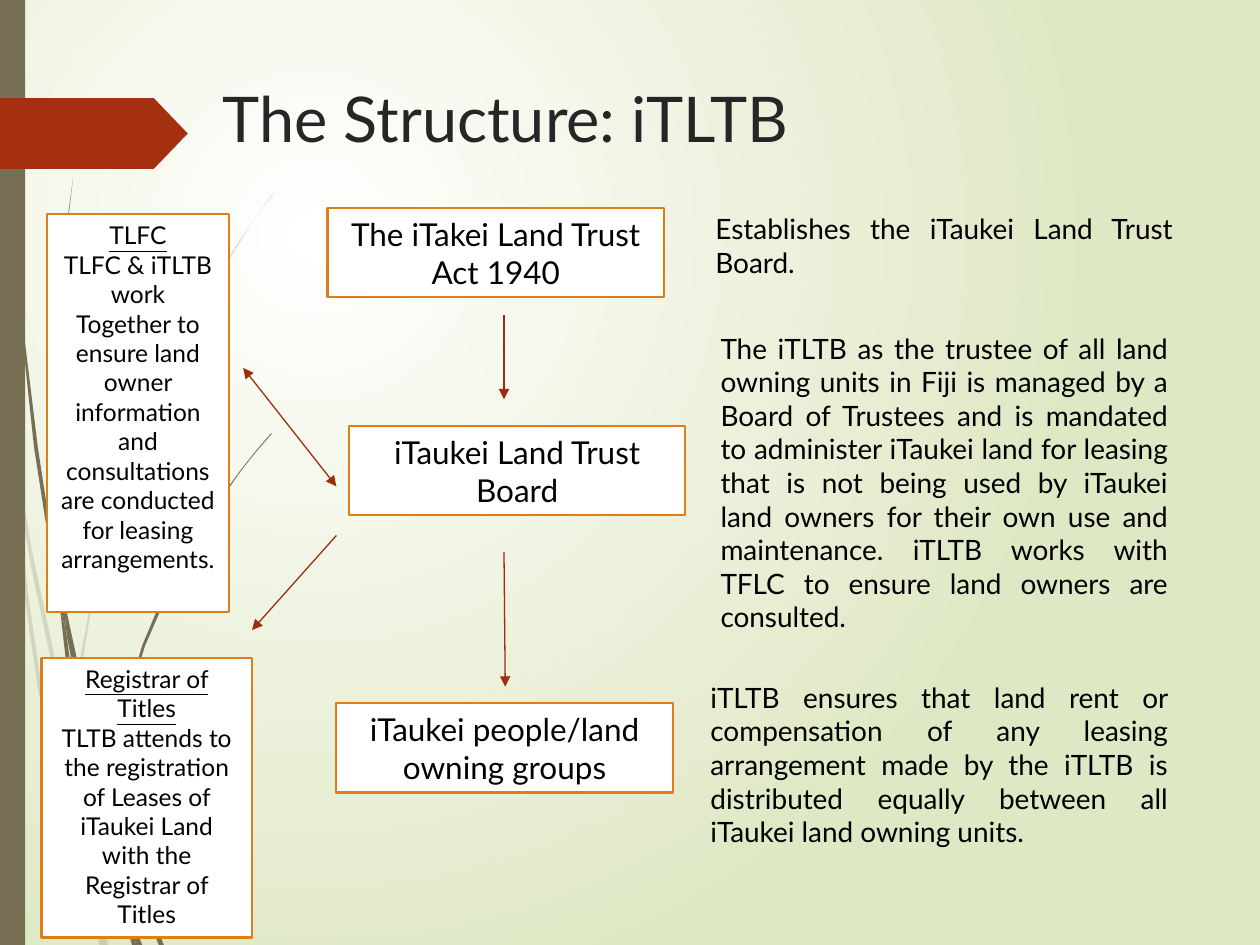
from dataclasses import dataclass

from lxml import etree
from pptx import Presentation
from pptx import util as u
from pptx.dml.color import RGBColor
from pptx.enum import shapes, text
from pptx.oxml import ns

FONT = "Lato"
COLORS = {
    "olive": "766F54", "rust": "A53010", "arrow": "9E2E0F", "border": "DE7E18",
    "white": "FFFFFF", "glow": "DFE8C4", "ink": "000000", "heading": "262626",
}


@dataclass(frozen=True)
class Block:
    left: float
    top: float
    width: float
    height: float
    lines: tuple[str, ...]
    size: int
    align: text.PP_ALIGN = text.PP_ALIGN.CENTER
    anchor: text.MSO_ANCHOR = text.MSO_ANCHOR.MIDDLE
    color: str = "ink"
    underline_first: bool = False


@dataclass(frozen=True)
class Arrow:
    start: tuple[float, float]
    end: tuple[float, float]
    two_way: bool = False


def step(left: float, top: float, label: str) -> Block:
    return Block(left, top, 2.67, 0.71, (label,), 18)


def partner(left: float, top: float, width: float, height: float, *lines: str) -> Block:
    return Block(left, top, width, height, lines, 14,
                 anchor=text.MSO_ANCHOR.TOP, underline_first=True)


def remark(left: float, top: float, width: float, height: float, words: str) -> Block:
    return Block(left, top, width, height, (words,), 16,
                 text.PP_ALIGN.JUSTIFY, text.MSO_ANCHOR.TOP)


PALE_WISPS = [
    [(0.08, 3.5), (0.06, 3.22), (0, 2.82), (0, 2.99), (0.07, 3.44)],
    [(0.4, 5.22), (0.59, 5.99), (0.59, 5.86), (0.43, 5.2), (0.25, 4.35),
     (0.1, 3.45), (0.12, 3.76), (0.25, 4.52)],
    [(0.64, 6.07), (0.61, 5.96), (0.61, 6.1), (0.85, 6.94), (1.04, 7.5),
     (1.08, 7.5), (0.88, 6.92)],
    [(0.83, 7.5), (0.86, 7.5), (0.73, 7.11)],
    [(0.64, 6.83), (0.48, 6.19), (0.33, 5.45), (0.22, 4.69), (0.12, 3.76),
     (0.08, 3.5), (0.19, 4.7), (0.3, 5.46), (0.45, 6.21), (0.64, 6.93),
     (0.7, 7.14), (0.69, 7.07)],
    [(0.61, 5.84), (0.66, 5.22), (0.76, 4.62), (0.92, 4.04), (1.11, 3.49),
     (1.34, 2.95), (1.59, 2.45), (1.87, 1.98), (2.01, 1.75), (2.17, 1.54),
     (2.17, 1.53), (2.01, 1.75), (1.86, 1.97), (1.58, 2.44), (1.33, 2.94),
     (1.1, 3.48), (0.91, 4.03), (0.75, 4.61), (0.64, 5.21), (0.59, 5.84),
     (0.61, 5.96)],
    [(0.7, 7.14), (0.79, 7.5), (0.82, 7.5)],
    [(0.67, 6.92), (0.65, 6.83), (0.69, 7.07), (0.7, 7.14), (0.82, 7.5),
     (0.83, 7.5), (0.73, 7.11)],
]
DARK_WISPS = [
    [(0.05, 1.1), (0.14, 2.33), (0.27, 3.55), (0.46, 4.77), (0.47, 4.81),
     (0.45, 4.53), (0.3, 3.55), (0.15, 2.32), (0.06, 1.09), (0.04, 0.48),
     (0.03, 0), (0.02, 0), (0.03, 0.48)],
    [(0.73, 5.92), (0.88, 6.45), (0.88, 6.31), (0.77, 5.9), (0.63, 5.32),
     (0.5, 4.72), (0.53, 5.05), (0.62, 5.49)],
    [(0.94, 6.49), (0.91, 6.41), (0.91, 6.56), (1.09, 7.08), (1.26, 7.5),
     (1.3, 7.5), (1.13, 7.06)],
    [(0.91, 6.91), (0.81, 6.57), (0.69, 6.07), (0.6, 5.56), (0.53, 5.05),
     (0.47, 4.77), (0.56, 5.57), (0.65, 6.08), (0.77, 6.59), (0.92, 7.08),
     (0.97, 7.22), (0.96, 7.17)],
    [(0.5, 4.72), (0.48, 4.53), (0.44, 3.49), (0.48, 2.45), (0.52, 1.93),
     (0.58, 1.41), (0.51, 1.93), (0.47, 2.45), (0.43, 3.49), (0.45, 4.49),
     (0.49, 4.72)],
    [(1.1, 7.5), (1.13, 7.5), (1, 7.19)],
    [(0.47, 4.77), (0.53, 5.05), (0.5, 4.72), (0.49, 4.72), (0.45, 4.49),
     (0.45, 4.53)],
    [(0.91, 6.33), (0.95, 5.92), (1.03, 5.52), (1.15, 5.13), (1.31, 4.76),
     (1.49, 4.4), (1.69, 4.06), (1.91, 3.74), (2.03, 3.59), (2.16, 3.44),
     (2.15, 3.44), (2.03, 3.58), (1.91, 3.73), (1.68, 4.05), (1.48, 4.39),
     (1.29, 4.74), (1.13, 5.12), (1.01, 5.51), (0.92, 5.91), (0.88, 6.31),
     (0.91, 6.41)],
    [(0.97, 7.22), (1.05, 7.5), (1.08, 7.5)],
    [(0.96, 7.06), (0.91, 6.91), (0.96, 7.17), (0.97, 7.22), (1.08, 7.5),
     (1.1, 7.5), (1, 7.19)],
]
TITLE = Block(1.67, 0.58, 7.21, 1.08, ("The Structure: iTLTB",), 36,
              text.PP_ALIGN.LEFT, text.MSO_ANCHOR.TOP, "heading")
BOXES = [
    step(2.6, 1.65, "The iTakei Land Trust Act 1940"),
    step(2.77, 3.38, "iTaukei Land Trust Board"),
    step(2.67, 5.58, "iTaukei people/land owning groups"),
    partner(0.37, 1.7, 1.45, 3.16, "TLFC", "TLFC & iTLTB work",
            "Together to ensure land owner information and consultations "
            "are conducted for leasing arrangements."),
    partner(0.33, 5.22, 1.67, 2.22, "Registrar of Titles",
            "TLTB attends to the registration of Leases of iTaukei Land "
            "with the Registrar of Titles"),
]
REMARKS = [
    remark(5.58, 1.63, 3.83, 0.64, "Establishes the iTaukei Land Trust Board."),
    remark(5.62, 2.58, 3.75, 2.52,
           "The iTLTB as the trustee of all land owning units in Fiji is managed by "
           "a Board of Trustees and is mandated to administer iTaukei land for "
           "leasing that is not being used by iTaukei land owners for their own use "
           "and maintenance. iTLTB works with TFLC to ensure land owners are consulted."),
    remark(5.54, 5.35, 3.83, 1.45,
           "iTLTB ensures that land rent or compensation of any leasing arrangement "
           "made by the iTLTB is distributed equally between all iTaukei land owning units."),
]
ARROWS = [
    Arrow((4, 2.5), (4, 3.17)),
    Arrow((4, 4.38), (4.01, 5.45)),
    Arrow((1.93, 2.92), (2.67, 3.86), two_way=True),
    Arrow((2.67, 4.25), (2, 5)),
]


def rgb(name: str) -> RGBColor:
    return RGBColor.from_string(COLORS[name])


def paint(shape, fill: str, border: str | None = None) -> None:
    shape.shadow.inherit = False
    shape.fill.solid()
    shape.fill.fore_color.rgb = rgb(fill)
    if border:
        shape.line.color.rgb = rgb(border)
        shape.line.width = u.Pt(1.25)
    else:
        shape.line.fill.background()


def paint_background(slide) -> None:
    fill = slide.background.fill
    fill.gradient()
    for stop, name, position in zip(fill.gradient_stops, ("white", "glow"), (0, 1)):
        stop.color.rgb = rgb(name)
        stop.position = position
    linear = next(slide.background._cSld.iter(ns.qn("a:lin")))
    radial = etree.Element(ns.qn("a:path"), path="circle")
    etree.SubElement(radial, ns.qn("a:fillToRect"), l="50000", t="50000", r="100000", b="100000")
    linear.getparent().replace(linear, radial)


def draw_wisp(slide, points: list[tuple[float, float]], pale: bool) -> None:
    corners = [(u.Inches(x), u.Inches(y)) for x, y in points]
    builder = slide.shapes.build_freeform(*corners[0])
    builder.add_line_segments(corners[1:], close=True)
    wisp = builder.convert_to_shape()
    paint(wisp, "olive")
    if pale:
        tint = next(wisp._element.spPr.iter(ns.qn("a:srgbClr")))
        etree.SubElement(tint, ns.qn("a:alpha"), val="20000")


def draw_preset(slide, kind, left: float, top: float, width: float, height: float,
                fill: str, border: str | None = None):
    shape = slide.shapes.add_shape(kind, *map(u.Inches, (left, top, width, height)))
    paint(shape, fill, border)
    return shape


def write(shape, block: Block) -> None:
    frame = shape.text_frame
    frame.word_wrap = True
    frame.vertical_anchor = block.anchor
    for index, line in enumerate(block.lines):
        paragraph = frame.add_paragraph() if index else frame.paragraphs[0]
        paragraph.alignment = block.align
        run = paragraph.add_run()
        run.text = line
        run.font.name = FONT
        run.font.size = u.Pt(block.size)
        run.font.color.rgb = rgb(block.color)
        run.font.underline = block.underline_first and index == 0


def draw_box(slide, block: Block) -> None:
    write(draw_preset(slide, shapes.MSO_SHAPE.RECTANGLE, block.left, block.top,
                      block.width, block.height, "white", "border"), block)


def draw_text(slide, block: Block) -> None:
    write(slide.shapes.add_textbox(*map(u.Inches, (
        block.left, block.top, block.width, block.height))), block)


def draw_arrow(slide, arrow: Arrow) -> None:
    connector = slide.shapes.add_connector(
        shapes.MSO_CONNECTOR.STRAIGHT, *map(u.Inches, arrow.start + arrow.end))
    connector.line.color.rgb = rgb("arrow")
    connector.line.width = u.Pt(0.75)
    outline = connector.line._get_or_add_ln()
    for end in ("a:headEnd", "a:tailEnd") if arrow.two_way else ("a:tailEnd",):
        etree.SubElement(outline, ns.qn(end), type="triangle")
    etree.SubElement(connector._element.spPr, ns.qn("a:effectLst"))


def main() -> None:
    deck = Presentation()
    deck.slide_width, deck.slide_height = u.Inches(10), u.Inches(7.5)
    slide = deck.slides.add_slide(deck.slide_layouts[6])
    paint_background(slide)
    for wisps, pale in ((PALE_WISPS, True), (DARK_WISPS, False)):
        for points in wisps:
            draw_wisp(slide, points, pale)
    draw_preset(slide, shapes.MSO_SHAPE.RECTANGLE, 0, 0, 0.2, 7.5, "olive")
    banner = draw_preset(slide, shapes.MSO_SHAPE.PENTAGON, 0, 0.78, 1.49, 0.56, "rust")
    banner.adjustments[0] = 0.48
    for block in (TITLE, *REMARKS):
        draw_text(slide, block)
    for block in BOXES:
        draw_box(slide, block)
    for arrow in ARROWS:
        draw_arrow(slide, arrow)
    deck.save("out.pptx")


if __name__ == "__main__":
    main()
